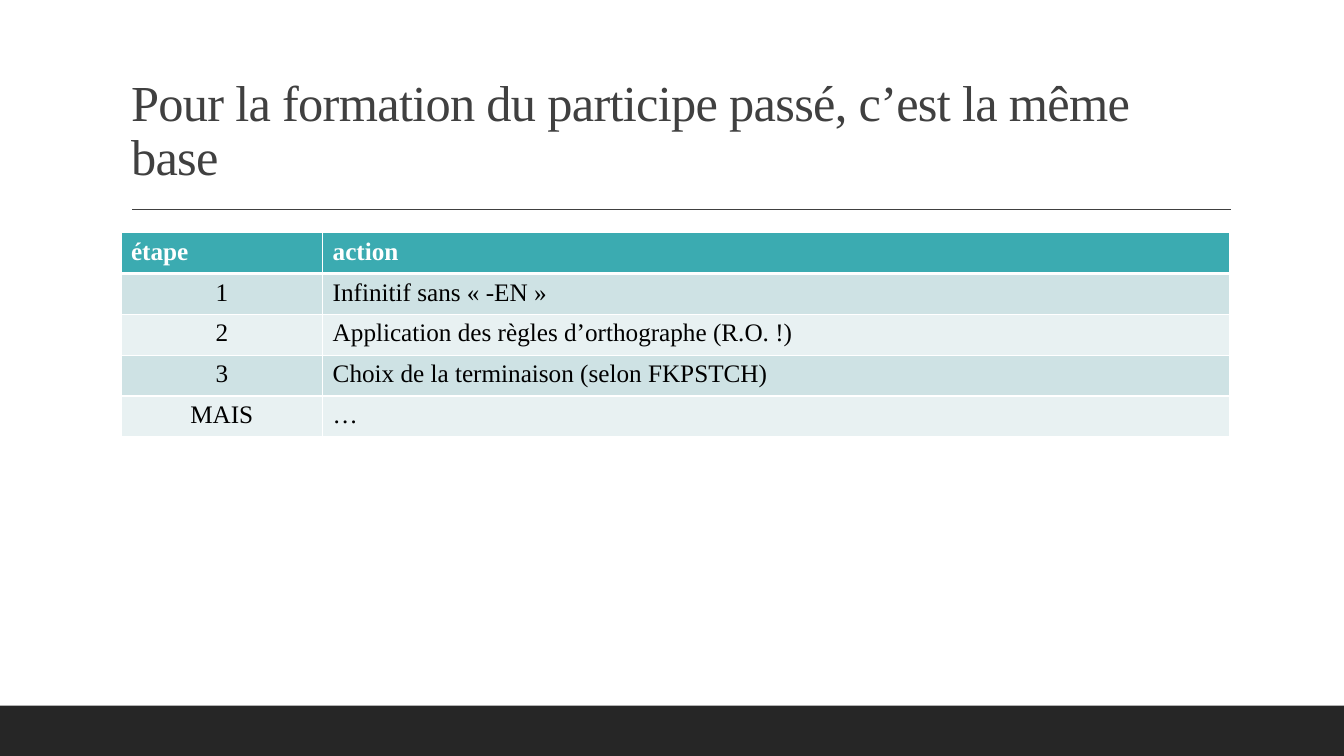
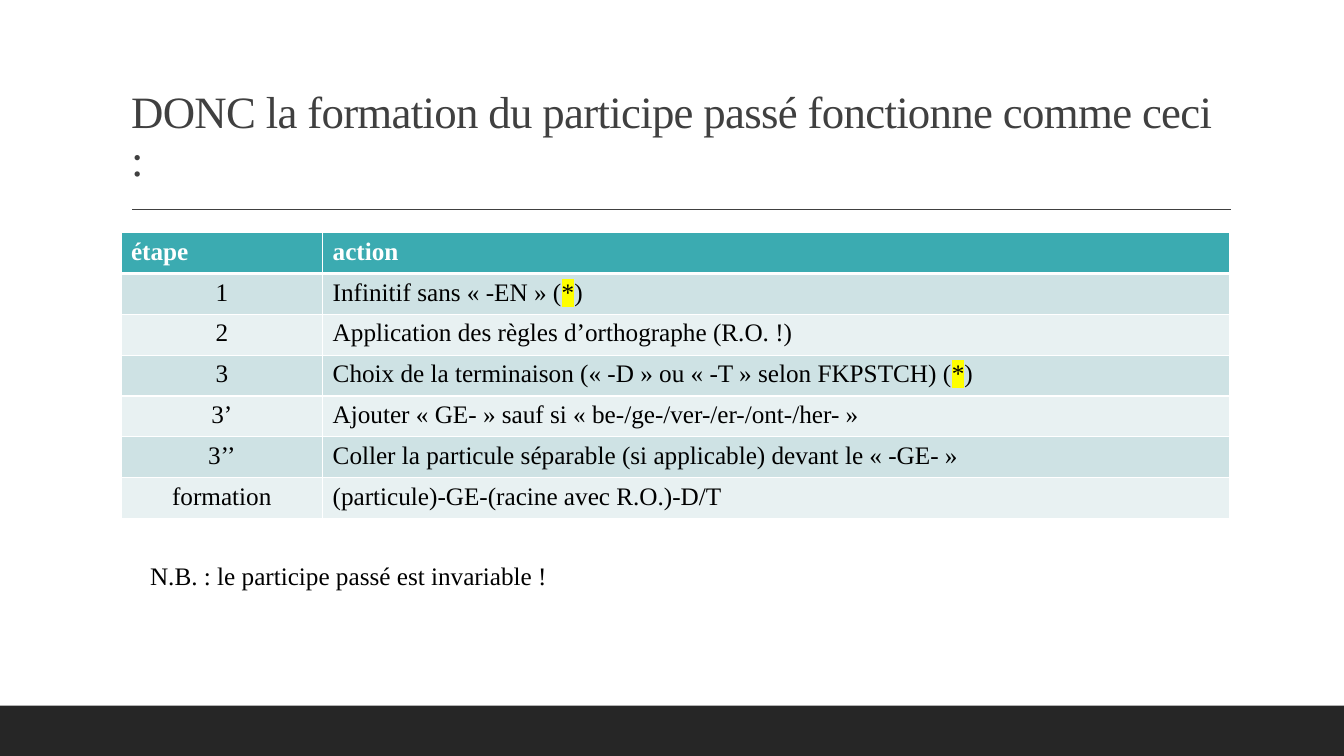
import pptx
import pptx.util
import pptx.dml.color
import pptx.enum.shapes
import pptx.enum.text
import pptx.oxml
import pptx.oxml.ns

Inches = pptx.util.Inches
Pt = pptx.util.Pt
ALIGN = pptx.enum.text.PP_ALIGN
ANCHOR = pptx.enum.text.MSO_ANCHOR
qn = pptx.oxml.ns.qn

FONT = "Times New Roman"
WHITE, BLACK, GREY, DARK = "FFFFFF", "000000", "404040", "262626"
HEADER, BANDS, MARK = "3BABB1", ("CEE2E4", "E8F1F2"), "FFFF00"
ROW_HEIGHT = Inches(0.81) // 2
COLUMNS = (2, 9)

HEADINGS = ("étape", "action")
SLIDES = [
    {
        "title": "Pour la formation du participe passé, c’est la même base",
        "size": 36,
        "rows": [
            ("1", "Infinitif sans « -EN »"),
            ("2", "Application des règles d’orthographe (R.O. !)"),
            ("3", "Choix de la terminaison (selon FKPSTCH)"),
            ("MAIS", "…"),
        ],
    },
    {
        "title": "DONC la formation du participe passé fonctionne comme ceci :",
        "size": 32,
        "rows": [
            ("1", "Infinitif sans « -EN » (*)"),
            ("2", "Application des règles d’orthographe (R.O. !)"),
            ("3", "Choix de la terminaison (« -D » ou « -T » selon FKPSTCH) (*)"),
            ("3’", "Ajouter « GE- » sauf si « be-/ge-/ver-/er-/ont-/her- »"),
            ("3’’", "Coller la particule séparable (si applicable) devant le « -GE- »"),
            ("formation", "(particule)-GE-(racine avec R.O.)-D/T"),
        ],
        "note": "N.B. : le participe passé est invariable !",
    },
]


def rgb(value):
    return pptx.dml.color.RGBColor.from_string(value)


def drawing(tag, content=""):
    namespace = pptx.oxml.ns.nsdecls("a")
    name = tag.split()[0]
    return pptx.oxml.parse_xml(f"<a:{tag} {namespace}>{content}</a:{name}>")


def solid(value):
    return f'<a:solidFill><a:srgbClr val="{value}"/></a:solidFill>'


def paint(shape, color):
    shape.fill.solid()
    shape.fill.fore_color.rgb = rgb(color)


def add_run(para, text, size=18, color=BLACK, bold=False):
    span = para.add_run()
    span.text = text
    font = span.font
    font.name, font.size, font.bold = FONT, Pt(size), bold
    font.color.rgb = rgb(color)
    return span


def highlight(span):
    fill = span.font.fill
    properties = span.font.color and span._r.get_or_add_rPr()
    mark = drawing("highlight", f'<a:srgbClr val="{MARK}"/>')
    properties.find(qn("a:solidFill")).addnext(mark)


def build_layout(layout, page):
    for holder in list(layout.placeholders)[1:]:
        holder.element.getparent().remove(holder.element)
    band = page.shapes.add_shape(
        pptx.enum.shapes.MSO_SHAPE.RECTANGLE, 0, Inches(7), Inches(13.33), Inches(0.5))
    paint(band, DARK)
    band.line.fill.background()
    band.shadow.inherit = False
    rule = page.shapes.add_connector(
        pptx.enum.shapes.MSO_CONNECTOR.STRAIGHT,
        Inches(1.31), Inches(2.08), Inches(12.21), Inches(2.08))
    rule.line.color.rgb = rgb(GREY)
    rule.line.width = Pt(1)
    rule.element.spPr.append(drawing("effectLst"))
    for shape in (band, rule):
        layout.shapes.element.append(shape.element)


def set_title(page, text, size):
    title = page.shapes.title
    title.left, title.top = Inches(1.2), Inches(0.31)
    title.width, title.height = Inches(11), Inches(1.59)
    frame = title.text_frame
    frame.word_wrap = True
    frame.auto_size = pptx.enum.text.MSO_AUTO_SIZE.NONE
    frame.vertical_anchor = ANCHOR.BOTTOM
    para = frame.paragraphs[0]
    para.alignment = ALIGN.LEFT
    para.line_spacing = 0.9
    span = add_run(para, text, size, GREY)
    span._r.get_or_add_rPr().set("spc", "-50")


def set_borders(cell, bottom):
    properties = cell._tc.get_or_add_tcPr()
    widths = {"lnL": 1, "lnR": 1, "lnT": 1, "lnB": bottom}
    for index, (side, width) in enumerate(widths.items()):
        line = drawing(f'{side} w="{Pt(width)}"', solid(WHITE))
        properties.insert(index, line)


def add_table(page, body):
    rows = [HEADINGS, *body]
    table = page.shapes.add_table(
        len(rows), len(COLUMNS), Inches(1.2), Inches(2.31),
        Inches(sum(COLUMNS)), ROW_HEIGHT * len(rows)).table
    for column, width in zip(table.columns, COLUMNS):
        column.width = Inches(width)
    for row_index, row in enumerate(rows):
        heading = row_index == 0
        table.rows[row_index].height = ROW_HEIGHT
        for column_index, text in enumerate(row):
            cell = table.cell(row_index, column_index)
            paint(cell, HEADER if heading else BANDS[(row_index - 1) % 2])
            set_borders(cell, 3 if heading else 1)
            para = cell.text_frame.paragraphs[0]
            centred = column_index == 0 and not heading
            para.alignment = ALIGN.CENTER if centred else ALIGN.LEFT
            before, star, after = text.partition("*")
            add_run(para, before, color=WHITE if heading else BLACK, bold=heading)
            if star:
                highlight(add_run(para, star))
                add_run(para, after)


def add_note(page, text):
    box = page.shapes.add_textbox(Inches(1.39), Inches(5.51), Inches(7.57), Inches(0.4))
    box.text_frame.word_wrap = True
    add_run(box.text_frame.paragraphs[0], text)


def main():
    deck = pptx.Presentation()
    deck.slide_width, deck.slide_height = Inches(13.33), Inches(7.5)
    layout = deck.slide_layouts.get_by_name("Title Only")
    for index, content in enumerate(SLIDES):
        page = deck.slides.add_slide(layout)
        if index == 0:
            build_layout(layout, page)
        set_title(page, content["title"], content["size"])
        add_table(page, content["rows"])
        if "note" in content:
            add_note(page, content["note"])
    deck.save("out.pptx")


if __name__ == "__main__":
    main()
